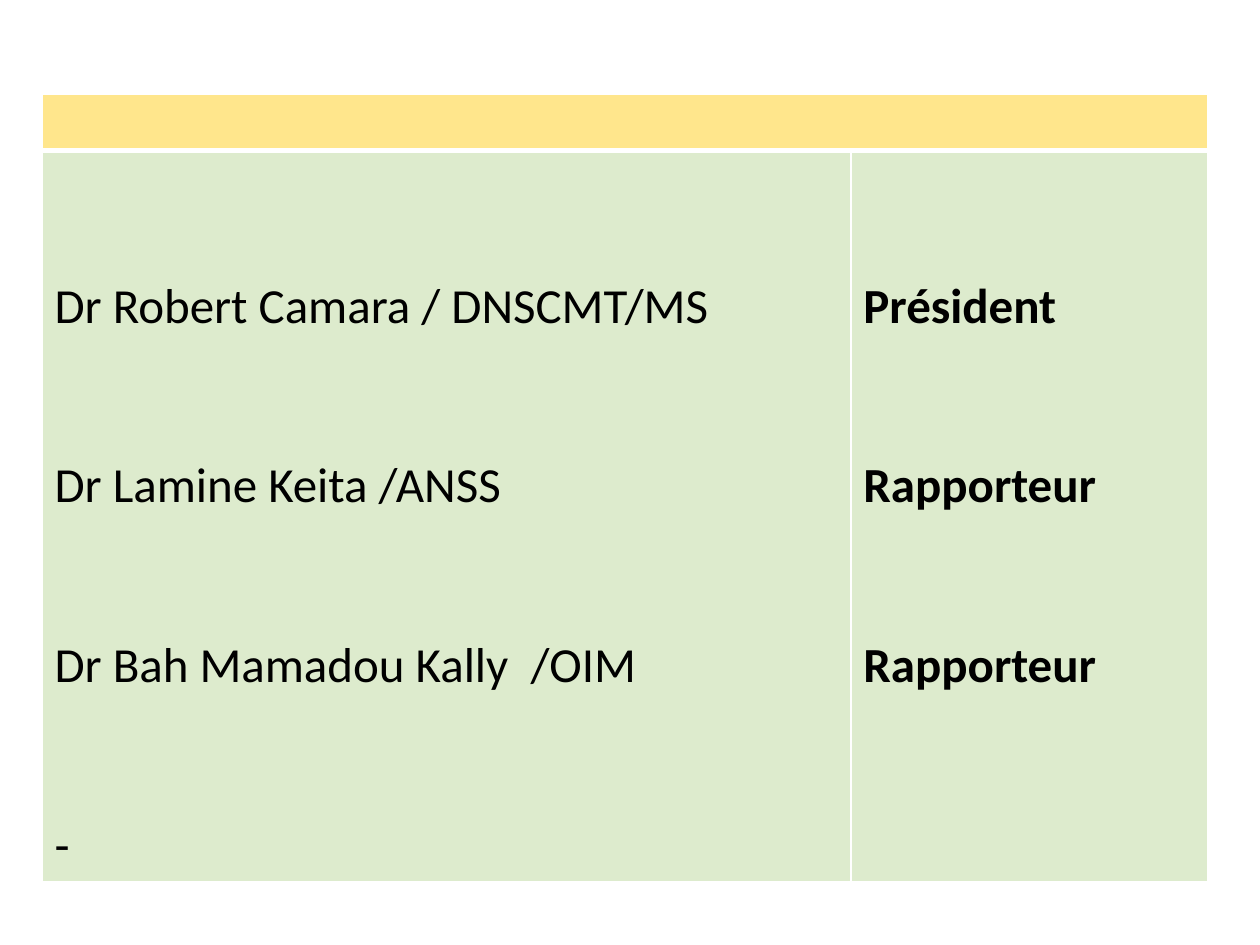
from lxml.etree import SubElement
from pptx import Presentation
from pptx.dml.color import RGBColor
from pptx.oxml.ns import qn
from pptx.util import Pt

COLORS = {"header": "FFE68C", "body": "DDEBCD", "text": "000000", "border": "FFFFFF"}
COLUMN_SHARES = (0.694, 0.306)
HEADER_HEIGHT = 32
MEMBERS = ["Dr Robert Camara\u00a0/ DNSCMT/MS", "Dr Lamine Keita /ANSS\u00a0",
           "Dr Bah Mamadou Kally  /OIM ", "-"]
ROLES = ["Président", "Rapporteur", "Rapporteur"]


def style_cell(cell, color, bottom_width=1, top_width=1):
    """Give a cell its borders and its fill."""
    properties = cell._tc.get_or_add_tcPr()
    widths = {"a:lnL": 1, "a:lnR": 1, "a:lnT": top_width, "a:lnB": bottom_width}
    for tag, width in widths.items():
        line = SubElement(properties, qn(tag), w=str(Pt(width)))
        fill = SubElement(line, qn("a:solidFill"))
        SubElement(fill, qn("a:srgbClr"), val=COLORS["border"])
    cell.fill.solid()
    cell.fill.fore_color.rgb = RGBColor.from_string(COLORS[color])


def write_lines(cell, lines, bold):
    """Write one triple-spaced paragraph for each line."""
    frame = cell.text_frame
    frame.text = "\n".join(lines)
    font_format = {"name": "Calibri", "size": Pt(28), "bold": bold}
    for paragraph in frame.paragraphs:
        paragraph.line_spacing = 3.0
        for run in paragraph.runs:
            for name, value in font_format.items():
                setattr(run.font, name, value)
            run.font.color.rgb = RGBColor.from_string(COLORS["text"])


def add_committee_table(slide, left, top, width, height):
    """Place the table of members and roles under a plain header band."""
    shape = slide.shapes.add_table(2, 2, Pt(left), Pt(top), Pt(width), Pt(height))
    table = shape.table
    for column, share in zip(table.columns, COLUMN_SHARES):
        column.width = Pt(width * share)
    for row, row_height in zip(table.rows, (HEADER_HEIGHT, height - HEADER_HEIGHT)):
        row.height = Pt(row_height)
    for index, (lines, bold) in enumerate(((MEMBERS, False), (ROLES, True))):
        style_cell(table.cell(0, index), "header", bottom_width=3)
        style_cell(table.cell(1, index), "body", top_width=3)
        write_lines(table.cell(1, index), lines, bold)
    table.cell(0, 0).merge(table.cell(0, 1))


def main():
    """Build and save the slide."""
    presentation = Presentation()
    presentation.slide_width, presentation.slide_height = Pt(720), Pt(540)
    slide = presentation.slides.add_slide(presentation.slide_layouts[6])
    add_committee_table(slide, left=24, top=54, width=666, height=442)
    presentation.save("out.pptx")


if __name__ == "__main__":
    main()
